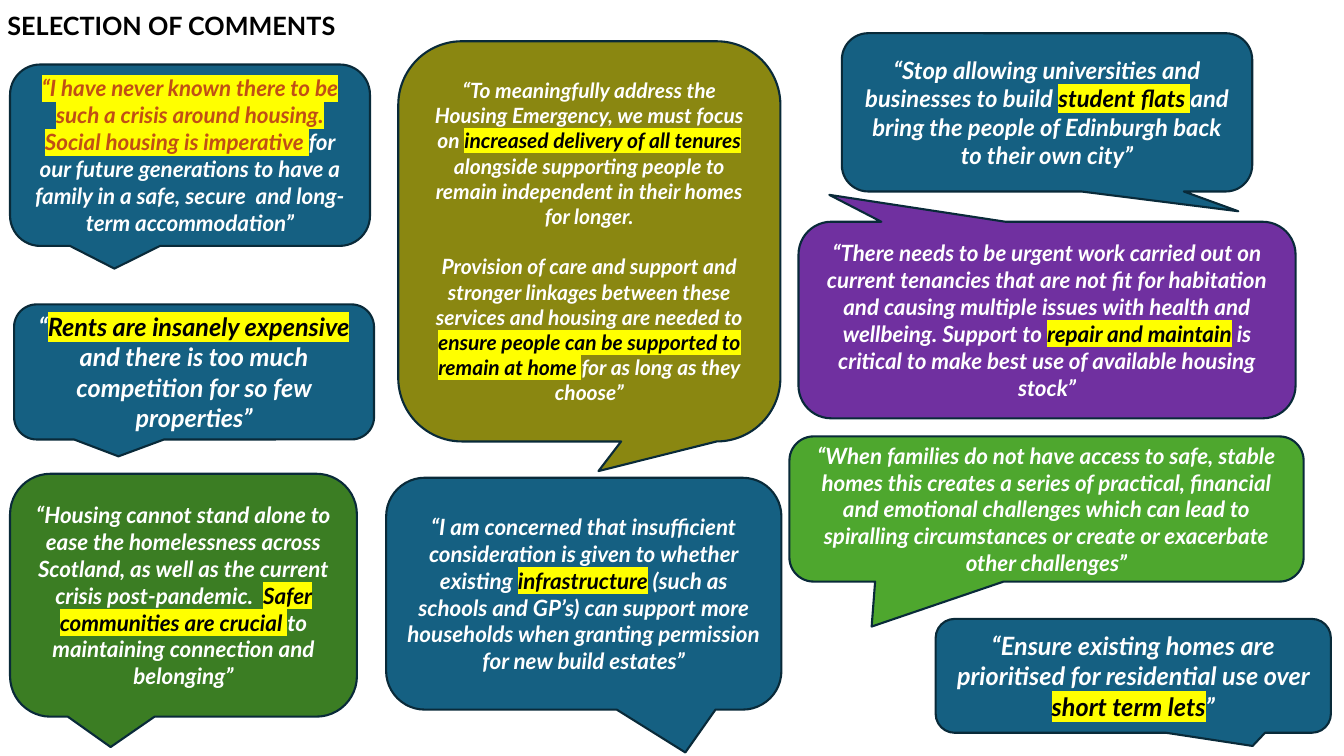
from lxml import etree
from pptx import Presentation
from pptx.dml.color import RGBColor
from pptx.enum.shapes import MSO_SHAPE
from pptx.enum.text import MSO_ANCHOR, MSO_AUTO_SIZE, PP_ALIGN
from pptx.oxml.ns import qn
from pptx.util import Pt

BUBBLE = MSO_SHAPE.ROUNDED_RECTANGULAR_CALLOUT
CENTER = PP_ALIGN.CENTER
MIDDLE = MSO_ANCHOR.MIDDLE
FIXED = MSO_AUTO_SIZE.NONE
PX = 9144  # 100 px to the inch
FONT = "Lato"
COLORS = {
    "blue": "156082", "purple": "7030A0", "green": "3B7D23",
    "lime": "4EA72E", "olive": "8A8711", "edge": "092A39",
    "white": "FFFFFF", "black": "000000", "rust": "C04F15",
    "yellow": "FFFF00",
}


def rgb(name):
    return RGBColor.from_string(COLORS[name])


def write(shape, text, size=16, color="white", mark="black", italic=True, gap=0):
    """Fill a shape with text; newlines part paragraphs, bars enclose highlights."""
    frame = shape.text_frame
    frame.word_wrap = True
    frame.auto_size = FIXED
    frame.vertical_anchor = MIDDLE
    for i, line in enumerate(text.split("\n")):
        para = frame.add_paragraph() if i else frame.paragraphs[0]
        para.alignment = CENTER
        para.space_before = Pt(gap if i else 0)
        for j, part in enumerate(line.split("|")):
            if not part:
                continue
            lit = j % 2 == 1
            run = para.add_run()
            run.text = part
            font = run.font
            font.size, font.bold, font.italic = Pt(size), True, italic
            font.color.rgb = rgb(mark if lit else color)
            if lit:
                props = run._r.get_or_add_rPr()
                light = etree.SubElement(props, qn("a:highlight"))
                etree.SubElement(light, qn("a:srgbClr"), val=COLORS["yellow"])
            font.name = FONT


deck = Presentation()
deck.slide_width, deck.slide_height = 1333 * PX, 750 * PX
slide = deck.slides.add_slide(deck.slide_layouts[5])

title = slide.shapes.title
title.left, title.top, title.width, title.height = [n * PX for n in (-258, 5, 862, 40)]
write(title, "SELECTION OF COMMENTS ", size=18, color="black", italic=False)

# Box in px, fill, tail tip as a share of the box from its centre, text, format
TAIL = (-0.21, 0.625)
QUOTES = [
    ((10, 64, 357, 180), "blue", TAIL,
     "|“I have never known there to be such a crisis around housing. "
     "Social housing is imperative |for our future generations to have a "
     "family in a safe, secure  and long-term accommodation”",
     {"mark": "rust"}),
    ((835, 33, 407, 157), "blue", (0.466, 0.625),
     "“Stop allowing universities and businesses to build |student flats |"
     "and bring the people of Edinburgh back to their own city”",
     {"size": 17}),
    ((14, 302, 357, 134), "blue", TAIL,
     "“|Rents are insanely expensive |and there is too much competition "
     "for so few properties”",
     {"size": 18}),
    ((792, 220, 493, 195), "purple", (-0.438, -0.637),
     "“There needs to be urgent work carried out on current tenancies that "
     "are not fit for habitation and causing multiple issues with health and "
     "wellbeing. Support to |repair and maintain| is critical to make best "
     "use of available housing stock”",
     {}),
    ((10, 470, 344, 241), "green", TAIL,
     "“Housing cannot stand alone to ease the homelessness across Scotland, "
     "as well as the current crisis post-pandemic.  |Safer communities are "
     "crucial |to maintaining connection and belonging”",
     {}),
    ((783, 433, 510, 144), "lime", (-0.34, 0.81),
     "“When families do not have access to safe, stable homes this creates a "
     "series of practical, financial and emotional challenges which can lead "
     "to spiralling circumstances or create or exacerbate other challenges”",
     {}),
    ((395, 41, 379, 397), "olive", (0.024, 0.574),
     "“To meaningfully address the Housing Emergency, we must focus on "
     "|increased delivery of all tenures |alongside supporting people to "
     "remain independent in their homes for longer.\n"
     "Provision of care and support and stronger linkages between these "
     "services and housing are needed to |ensure people can be supported to "
     "remain at home |for as long as they choose”",
     {"size": 15, "gap": 18}),
    ((928, 614, 392, 113), "blue", (0.302, 0.616),
     "“Ensure existing homes are prioritised for residential use over "
     "|short term lets|”",
     {"size": 18}),
    ((383, 474, 392, 230), "blue", (0.257, 0.685),
     "“I am concerned that insufficient consideration is given to whether "
     "existing |infrastructure| (such as schools and GP’s) can support more "
     "households when granting permission for new build estates”",
     {}),
]

for box, fill, tip, text, style in QUOTES:
    bubble = slide.shapes.add_shape(BUBBLE, *[n * PX for n in box])
    bubble.shadow.inherit = False
    bubble.adjustments[0], bubble.adjustments[1] = tip
    bubble.fill.solid()
    bubble.fill.fore_color.rgb = rgb(fill)
    bubble.line.color.rgb = rgb("edge")
    bubble.line.width = Pt(1.5)
    write(bubble, text, **style)

deck.save("out.pptx")
